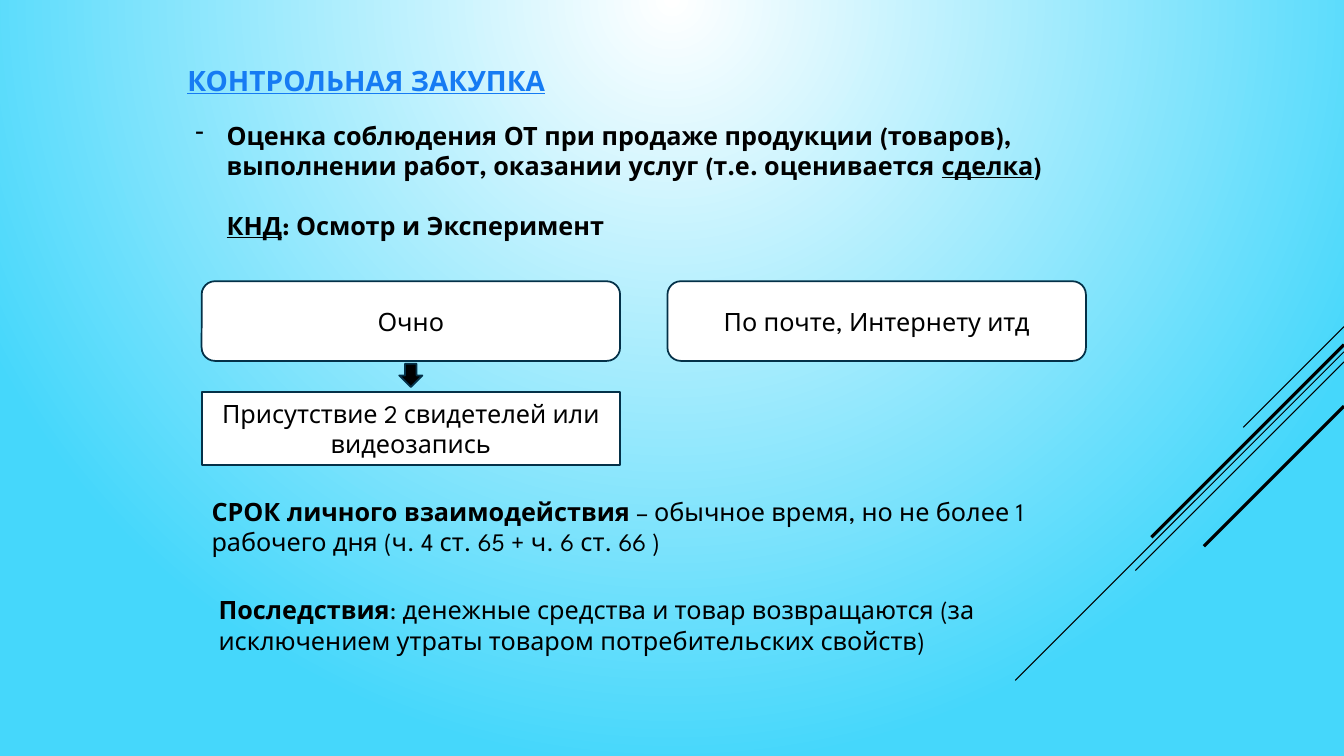
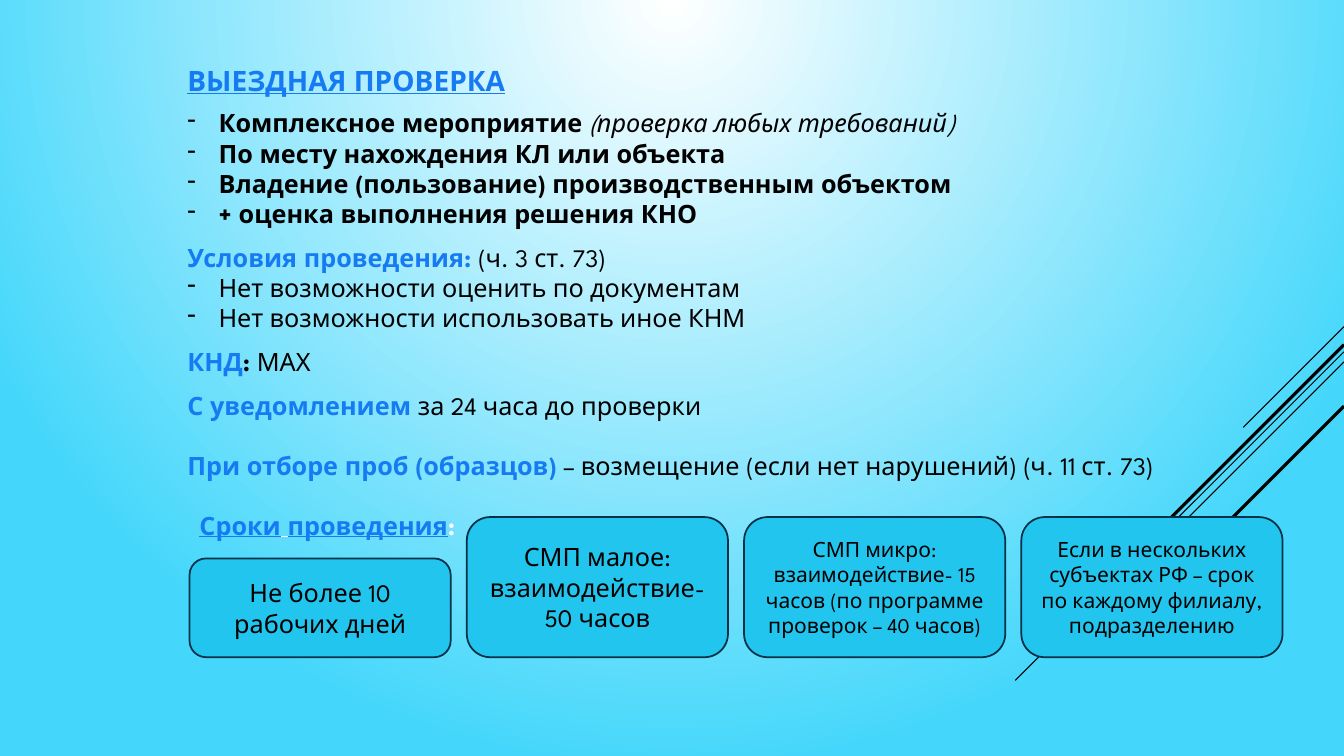
"""Build two slides on inspection types: test purchase and on-site inspection."""
from dataclasses import dataclass

from lxml.etree import SubElement
from pptx import Presentation
from pptx.dml.color import RGBColor
from pptx.enum.shapes import MSO_CONNECTOR, MSO_SHAPE
from pptx.enum.text import MSO_ANCHOR, PP_ALIGN
from pptx.oxml.ns import qn
from pptx.util import Inches, Pt


@dataclass(frozen=True)
class Theme:
    font: str = "League Spartan"
    black: str = "000000"
    white: str = "FFFFFF"
    accent: str = "167BF3"
    sky: str = "45D7FB"
    card: str = "22C5ED"
    border: str = "043148"
    title: int = 20
    body: int = 18
    small: int = 15
    gap: float = 9.6
    wide_gap: float = 21.6


T = Theme()
RIGHT_EDGE = 13.33
INDENT = 0.31

DIAGONALS = [
    (3.24, 1.00, 0.75),
    (3.49, 3.26, 0.75),
    (3.59, 2.07, 0.75),
    (3.42, 1.91, 2.25),
    (4.03, 1.39, 2.25),
]

PURCHASE_TITLE = "КОНТРОЛЬНАЯ ЗАКУПКА"
PURCHASE_TEXTS = [
    ((1.84, 1.14, 9.78, 1.62), [
        {"bullet": True, "runs": [
            ("Оценка соблюдения ОТ при продаже продукции (товаров), выполнении работ, "
             "оказании услуг (т.е. оценивается ", "b"), ("сделка", "bu"), (")", "b")]},
        {"indent": INDENT, "before": T.wide_gap,
         "runs": [("КНД", "bu"), (": Осмотр и Эксперимент", "b")]},
    ]),
    ((2, 4.87, 8.54, 0.71), [
        {"runs": [("СРОК личного взаимодействия ", "b"),
                  ("– обычное время, но не более 1 рабочего дня (ч. 4 ст. 65 + ч. 6 ст. 66 )", "")]},
    ]),
    ((2.07, 5.85, 7.86, 0.71), [
        {"runs": [("Последствия", "b"),
                  (": денежные средства и товар возвращаются "
                   "(за исключением утраты товаром потребительских свойств)", "")]},
    ]),
]
PURCHASE_MODES = ["Очно", "По почте, Интернету итд"]
WITNESSES = "Присутствие 2 свидетелей или видеозапись"

VISIT_TITLE = "ВЫЕЗДНАЯ ПРОВЕРКА"
VISIT_TEXTS = [
    ((1.76, 1.02, 10.32, 3.84), [
        {"bullet": True, "runs": [("Комплексное мероприятие ", "b"),
                                  ("(проверка любых требований)", "i")]},
        {"bullet": True, "runs": [("По месту нахождения КЛ или объекта", "b")]},
        {"bullet": True, "runs": [("Владение (пользование) производственным объектом", "b")]},
        {"bullet": True, "runs": [("+ оценка выполнения решения КНО", "b")]},
        {"before": T.gap, "runs": [("Условия проведения: ", "ba"), ("(ч. 3 ст. 73)", "")]},
        {"bullet": True, "runs": [("Нет возможности оценить по документам", "")]},
        {"bullet": True, "runs": [("Нет возможности использовать иное КНМ", "")]},
        {"before": T.gap, "runs": [("КНД", "ba"), (": ", "b"), ("МАХ", "")]},
        {"before": T.gap, "runs": [("С уведомлением ", "ba"), ("за 24 часа до проверки", "")]},
        {"before": T.wide_gap, "runs": [
            ("При отборе проб (образцов) ", "ba"),
            ("– возмещение (если нет нарушений) (ч. 11 ст. 73)", "")]},
    ]),
    ((1.88, 5.01, 3.55, 0.4), [
        {"runs": [("Сроки", "bua"), (" ", "buw"), ("проведения", "bua"), (":", "bw")]},
    ]),
]
TERMS = [
    ("Не более 10 рабочих дней", T.body, 0.98),
    ("СМП малое: взаимодействие- 50 часов", T.body, 1.39),
    ("СМП микро: взаимодействие- 15 часов (по программе проверок – 40 часов)", T.small, 1.39),
    ("Если в нескольких субъектах РФ – срок по каждому филиалу, подразделению", T.small, 1.39),
]


def rgb(value):
    return RGBColor.from_string(value)


def box(*lengths):
    return [Inches(v) for v in lengths]


def add_run(p, text, style):
    r = p.add_run()
    r.text = text
    font = r.font
    font.bold, font.italic, font.underline = (flag in style for flag in "biu")
    font.color.rgb = rgb(T.accent if "a" in style else T.white if "w" in style else T.black)


def add_text(s, at, paragraphs, size=T.body):
    tf = s.shapes.add_textbox(*box(*at)).text_frame
    tf.word_wrap = True
    for i, item in enumerate(paragraphs):
        p = tf.add_paragraph() if i else tf.paragraphs[0]
        p.font.name, p.font.size = T.font, Pt(size)
        p.space_before = Pt(item.get("before", 0))
        indent = INDENT if item.get("bullet") else item.get("indent", 0)
        pPr = p._p.get_or_add_pPr()
        pPr.set("marL", str(Inches(indent)))
        if item.get("bullet"):
            pPr.set("indent", str(-Inches(indent)))
            bullet = pPr.makeelement(qn("a:buChar"), {"char": "-"})
            pPr.insert_element_before(bullet, "a:tabLst", "a:defRPr", "a:extLst")
        for text, style in item["runs"]:
            add_run(p, text, style)


def add_block(s, kind, at, fill, text="", size=T.body):
    sp = s.shapes.add_shape(kind, *box(*at))
    sp.shadow.inherit = False
    sp.fill.solid()
    sp.fill.fore_color.rgb = rgb(fill)
    sp.line.color.rgb = rgb(T.border)
    sp.line.width = Pt(1.25)
    if text:
        tf = sp.text_frame
        tf.word_wrap = True
        tf.vertical_anchor = MSO_ANCHOR.MIDDLE
        p = tf.paragraphs[0]
        p.alignment = PP_ALIGN.CENTER
        p.font.name, p.font.size = T.font, Pt(size)
        add_run(p, text, "")


def style_master(prs, s):
    master = prs.slide_master
    fill = master.background.fill
    fill.gradient()
    for stop, color in zip(fill.gradient_stops, (T.white, T.sky)):
        stop.color.rgb = rgb(color)
    for stop, position in zip(fill.gradient_stops, (0, 1)):
        stop.position = position
    lin = next(master.element.iter(qn("a:lin")))
    grad = lin.getparent()
    grad.remove(lin)
    radial = SubElement(grad, qn("a:path"), {"path": "circle"})
    SubElement(radial, qn("a:fillToRect"), {"b": "100000"})

    for i, (top, reach, width) in enumerate(DIAGONALS):
        line = s.shapes.add_connector(
            MSO_CONNECTOR.STRAIGHT, *box(RIGHT_EDGE, top, RIGHT_EDGE - reach, top + reach))
        line.line.color.rgb = rgb(T.black)
        line.line.width = Pt(width)
        SubElement(line.element.spPr, qn("a:effectLst"))
        next(line.element.iter(qn("p:cNvPr"))).set("id", str(100 + i))
        master.shapes.element.append(line.element)


def fill_slide(s, title, texts):
    add_text(s, (1.76, 0.58, 10.16, 0.34), [{"runs": [(title, "bua")]}], T.title)
    for at, paragraphs in texts:
        add_text(s, at, paragraphs)


def add_purchase(s):
    fill_slide(s, PURCHASE_TITLE, PURCHASE_TEXTS)
    left, width, pitch, arrow = 2, 4.15, 4.62, 0.23
    for i, mode in enumerate(PURCHASE_MODES):
        add_block(s, MSO_SHAPE.ROUNDED_RECTANGLE,
                  (left + i * pitch, 2.79, width, 0.79), T.white, mode)
    add_block(s, MSO_SHAPE.RECTANGLE, (left, 3.89, width, 0.72), T.white, WITNESSES)
    add_block(s, MSO_SHAPE.DOWN_ARROW,
              (left + (width - arrow) / 2, 3.61, arrow, arrow), T.black)


def add_visit(s):
    fill_slide(s, VISIT_TITLE, VISIT_TEXTS)
    left, bottom, width, pitch = 1.88, 6.52, 2.59, 2.75
    for i, (text, size, height) in enumerate(TERMS):
        add_block(s, MSO_SHAPE.ROUNDED_RECTANGLE,
                  (left + i * pitch, bottom - height, width, height), T.card, text, size)


def main():
    prs = Presentation()
    prs.slide_width, prs.slide_height = box(RIGHT_EDGE, 7.5)
    purchase, visit = (prs.slides.add_slide(prs.slide_layouts[6]) for _ in range(2))
    style_master(prs, purchase)
    add_purchase(purchase)
    add_visit(visit)
    prs.save("out.pptx")


if __name__ == "__main__":
    main()
